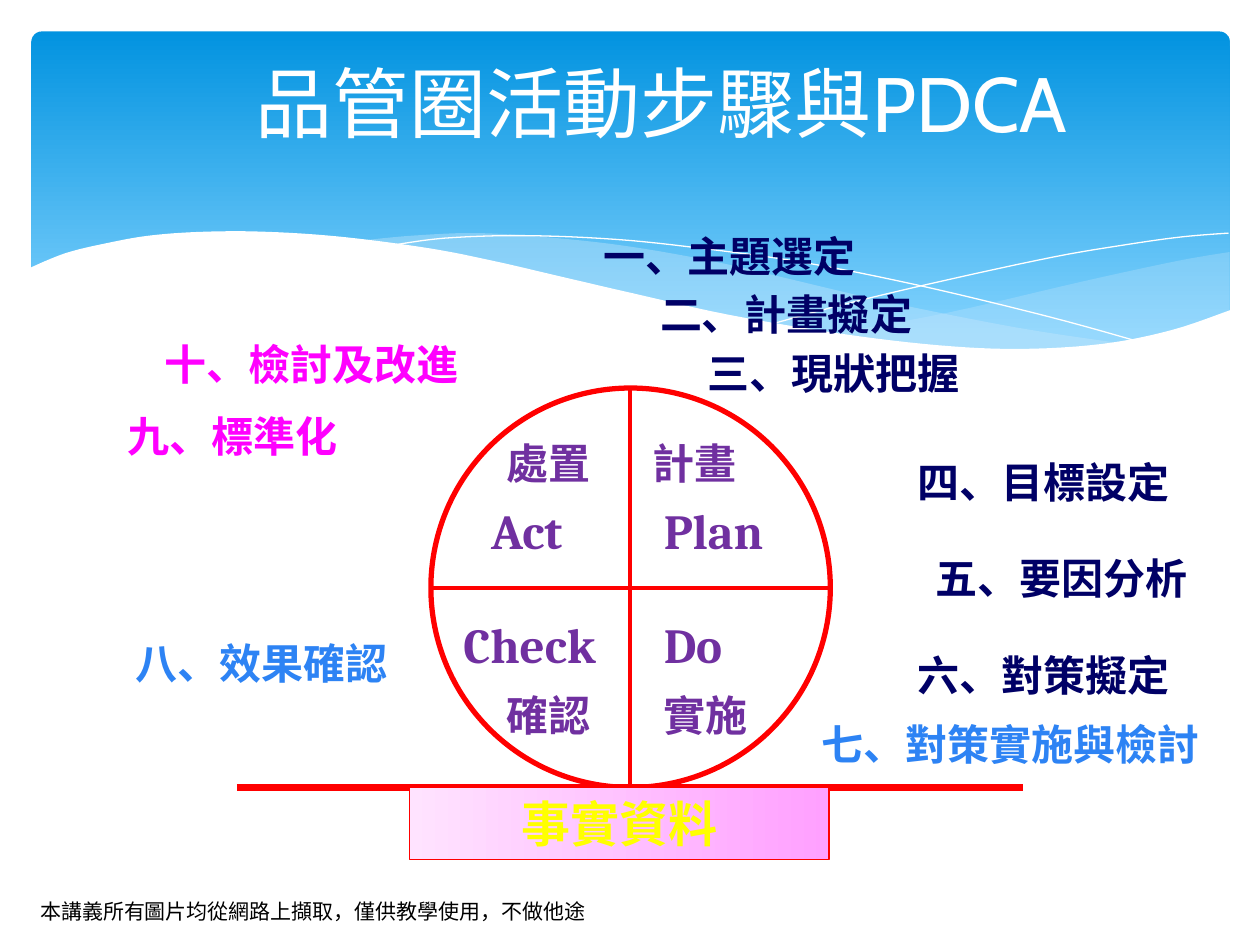
from lxml.etree import SubElement
from pptx import Presentation
from pptx.dml.color import RGBColor
from pptx.enum.shapes import MSO_CONNECTOR, MSO_SHAPE
from pptx.enum.text import MSO_ANCHOR, PP_ALIGN
from pptx.oxml.ns import qn
from pptx.util import Pt

PX = 9144  # 100 px to the inch
NAVY, BLUE, PINK, PURPLE = "000066", "2D83F4", "FF00FF", "7030A0"
RED, WHITE = "FF0000", "FFFFFF"


def px(n):
    return round(n * PX)


def color(text):
    return RGBColor.from_string(text)


def paint(shape, fill=None, alpha=None, line=None, width=0):
    shape.shadow.inherit = False
    if fill:
        shape.fill.solid()
        shape.fill.fore_color.rgb = color(fill)
        if alpha:
            tone = shape.fill._xPr.find(".//" + qn("a:srgbClr"))
            SubElement(tone, qn("a:alpha")).set("val", str(alpha * 1000))
    else:
        shape.fill.background()
    if line:
        shape.line.color.rgb = color(line)
        shape.line.width = Pt(width)
    else:
        shape.line.fill.background()


def shade(shape, stops, angle):
    shape.fill.gradient()
    shape.fill.gradient_angle = angle
    for stop, (place, tone) in zip(shape.fill.gradient_stops, stops):
        stop.position = place
        stop.color.rgb = color(tone)


def preset(slide, kind, box, **look):
    shape = slide.shapes.add_shape(kind, *map(px, box))
    paint(shape, **look)
    return shape


def write(frame, lines, font, size, tone, bold=True, align=None,
          space=None, before=12):
    """Fill a frame; each line is (text, indent in px)."""
    for i, (text, dent) in enumerate(lines):
        para = frame.paragraphs[0] if i == 0 else frame.add_paragraph()
        para.text = text
        para.font.name, para.font.size = font, Pt(size)
        para.font.bold, para.font.color.rgb = bold, color(tone)
        para.alignment, para.line_spacing = align, space
        if len(lines) > 1:
            para.space_before = Pt(before)
        if dent:
            para._p.get_or_add_pPr().set("marL", str(px(dent)))
        # East Asian text takes the same font
        for run in para.runs:
            props = run._r.get_or_add_rPr()
            SubElement(props, qn("a:ea")).set("typeface", font)


def label(slide, box, lines, font="Arial", size=24, tone=NAVY, wrap=True,
          **look):
    frame = slide.shapes.add_textbox(*map(px, box)).text_frame
    frame.word_wrap = wrap
    if isinstance(lines, str):
        lines = [(lines, 0)]
    write(frame, lines, font, size, tone, **look)
    return frame


def rule(slide, start, end, width):
    line = slide.shapes.add_connector(
        MSO_CONNECTOR.STRAIGHT, *map(px, start + end))
    line.line.color.rgb = color(RED)
    line.line.width = Pt(width)
    SubElement(line._element.spPr, qn("a:effectLst"))


def curve(knots, steps=6):
    """Smooth path through the knots (Catmull-Rom)."""
    ends = [knots[0], *knots, knots[-1]]
    points = []
    for a, b, c, d in zip(ends, ends[1:], ends[2:], ends[3:]):
        for k in range(steps):
            t = k / steps
            points.append(tuple(
                (2 * q + (r - p) * t + (2 * p - 5 * q + 4 * r - s) * t ** 2
                 + (3 * q - p - 3 * r + s) * t ** 3) / 2
                for p, q, r, s in zip(a, b, c, d)))
    return points + [knots[-1]]


def wave(slide, points, close=True, **look):
    points = [(px(x), px(y)) for x, y in points]
    pen = slide.shapes.build_freeform(*points[0])
    pen.add_line_segments(points[1:], close=close)
    paint(pen.convert_to_shape(), **look)


def banner(slide):
    sky = preset(slide, MSO_SHAPE.ROUNDED_RECTANGLE, (25, 25, 951, 270))
    sky.adjustments[0] = 0.03
    shade(sky, [(0, "0293E0"), (0.9, "83D3FE")], 270)

    # Pale waves
    wave(slide, curve([(976, 200), (935, 207), (861, 223), (753, 248),
                       (661, 265)])
         + curve([(661, 265), (705, 271), (757, 275), (814, 278), (863, 275),
                  (913, 267), (949, 257), (976, 247)]),
         fill="C6E7FC", alpha=29)
    wave(slide, curve([(893, 273), (807, 260), (706, 240), (629, 222),
                       (569, 208), (502, 196), (442, 189), (380, 185),
                       (328, 187), (286, 191)])
         + curve([(286, 191), (362, 203), (449, 222), (566, 248), (650, 264),
                  (722, 274), (785, 278), (838, 278), (893, 273)]),
         fill="C6E7FC", alpha=40)

    # Thin white lines
    for knots in ([(309, 195), (353, 189), (416, 187), (489, 190), (556, 197),
                   (636, 208), (727, 226), (831, 251), (907, 272)],
                  [(613, 257), (672, 241), (748, 223), (836, 204), (895, 194),
                   (938, 188), (975, 185)]):
        wave(slide, curve(knots), close=False, line=WHITE)

    # White lower edge
    wave(slide, curve([(977, 246), (930, 262), (875, 273), (809, 277),
                       (744, 274), (668, 265), (579, 250), (503, 233),
                       (447, 220), (391, 207), (340, 197), (271, 188),
                       (211, 184), (161, 184), (119, 187), (85, 193),
                       (52, 201), (23, 213)])
         + [(23, 329), (977, 329)], fill=WHITE)


def wheel(slide):
    preset(slide, MSO_SHAPE.OVAL, (342, 308, 317, 317), line=RED, width=3)
    rule(slide, (342, 467), (658, 467), 2.25)
    rule(slide, (500, 308), (500, 625), 2.25)
    rule(slide, (188, 625), (812, 625), 4.5)

    # Base
    base = preset(slide, MSO_SHAPE.RECTANGLE, (325, 625, 333, 57),
                  line=RED, width=0.75)
    shade(base, [(0, "FFA0FF"), (1, "FFE3FF")], 180)
    base.text_frame.vertical_anchor = MSO_ANCHOR.TOP
    write(base.text_frame, [("事實資料", 0)], "Arial", 28, "FFFF00",
          align=PP_ALIGN.CENTER)

    # Quarters
    for x, y, text in ((508, 342, "計畫"), (517, 542, "實施"),
                       (392, 542, "確認"), (392, 342, "處置")):
        label(slide, (x, y, 100, 50), text, tone=PURPLE)
    for x, y, text in ((517, 392, "Plan"), (517, 483, "Do"),
                       (358, 483, "Check"), (380, 392, "Act")):
        label(slide, (x, y, 133, 57), text, "Cambria", 28, PURPLE)


def steps(slide):
    label(slide, (469, 187, 404, 141),
          [("一、主題選定", 0), ("二、計畫擬定", 45), ("三、現狀把握", 83)],
          space=0.75)
    label(slide, (718, 337, 261, 218),
          [("四、目標設定", 0), ("五、要因分析", 15), ("六、對策擬定", 0)],
          space=1.5)
    label(slide, (642, 565, 342, 50), "七、對策實施與檢討", tone=BLUE)
    label(slide, (98, 501, 242, 50), "八、效果確認", tone=BLUE)
    label(slide, (91, 264, 339, 111),
          [("十、檢討及改進", 30), ("九、標準化", 0)], tone=PINK)


def main():
    deck = Presentation()
    deck.slide_width, deck.slide_height = px(1000), px(750)
    slide = deck.slides.add_slide(deck.slide_layouts[6])
    banner(slide)
    label(slide, (22, 708, 458, 30),
          "本講義所有圖片均從網路上擷取，僅供教學使用，不做他途",
          "Noto Sans CJK SC", 12, "000000", wrap=False, bold=False)
    wheel(slide)
    steps(slide)
    title = label(slide, (100, 30, 850, 101), "品管圈活動步驟與PDCA",
                  "Cabin", 44, WHITE, bold=False, align=PP_ALIGN.CENTER)
    title.vertical_anchor = MSO_ANCHOR.MIDDLE
    deck.save("out.pptx")


if __name__ == "__main__":
    main()
